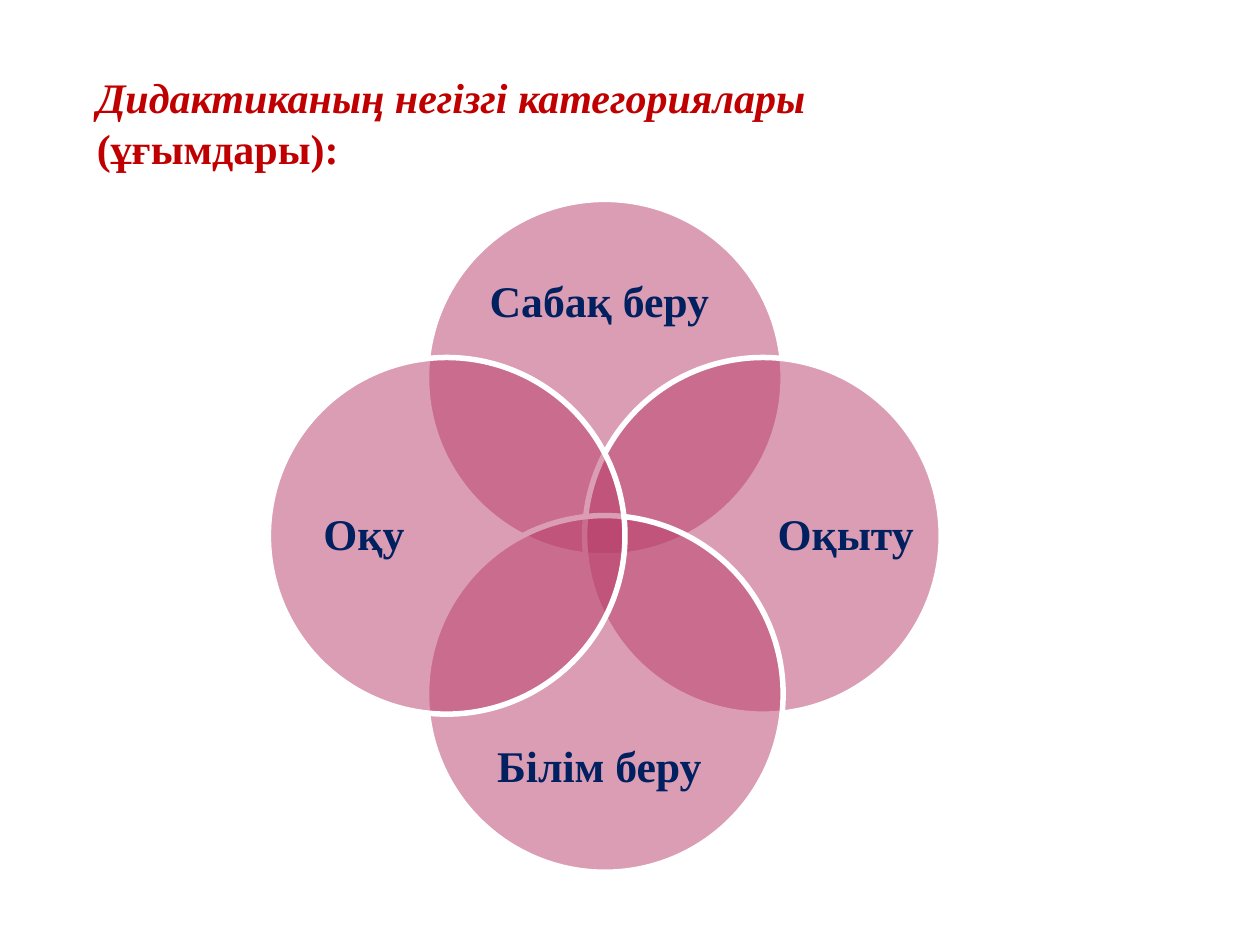
from dataclasses import dataclass

import lxml.etree
import pptx
import pptx.dml.color
import pptx.enum.shapes
import pptx.enum.text
import pptx.oxml.ns
import pptx.util


@dataclass(frozen=True)
class Theme:
    font: str = "Times New Roman"
    title_color: str = "C00000"
    label_color: str = "002060"
    circle_color: str = "B83D68"
    outline_color: str = "FFFFFF"
    circle_alpha: int = 50
    title_size: float = 24
    label_size: float = 25
    outline_width: float = 3.15


@dataclass(frozen=True)
class Box:
    left: float
    top: float
    width: float
    height: float

    def centered(self, x, y, width, height):
        """Inner box from its centre and size, all as shares of this box."""
        return Box(self.left + (x - width / 2) * self.width,
                   self.top + (y - height / 2) * self.height,
                   width * self.width, height * self.height)

    def emu(self):
        return [pptx.util.Inches(v)
                for v in (self.left, self.top, self.width, self.height)]


THEME = Theme()
SLIDE_W, SLIDE_H = 10, 7.5


def rgb(value):
    return pptx.dml.color.RGBColor.from_string(value)


def add_run(p, text, size, color, italic=False):
    r = p.add_run()
    r.text = text
    r.font.name = THEME.font
    r.font.size = pptx.util.Pt(size)
    r.font.color.rgb = rgb(color)
    r.font.bold = True
    r.font.italic = italic


def add_title(slide, box):
    tf = slide.shapes.add_textbox(*box.emu()).text_frame
    tf.word_wrap = True
    tf.auto_size = pptx.enum.text.MSO_AUTO_SIZE.SHAPE_TO_FIT_TEXT
    p = tf.paragraphs[0]
    for text, italic in (("Дидактиканың негізгі категориялары", True),
                         (" (ұғымдары):", False)):
        add_run(p, text, THEME.title_size, THEME.title_color, italic)


def add_circle(slide, box):
    sp = slide.shapes.add_shape(pptx.enum.shapes.MSO_SHAPE.OVAL, *box.emu())
    sp.shadow.inherit = False
    sp.fill.solid()
    sp.fill.fore_color.rgb = rgb(THEME.circle_color)
    sp.line.color.rgb = rgb(THEME.outline_color)
    sp.line.width = pptx.util.Pt(THEME.outline_width)
    # Transparency of the fill
    qn = pptx.oxml.ns.qn
    color = sp.element.spPr.find(qn("a:solidFill")).find(qn("a:srgbClr"))
    lxml.etree.SubElement(color, qn("a:alpha"),
                          val=str(THEME.circle_alpha * 1000))


def add_label(slide, box, text):
    tf = slide.shapes.add_textbox(*box.emu()).text_frame
    tf.word_wrap = True
    tf.vertical_anchor = pptx.enum.text.MSO_ANCHOR.MIDDLE
    tf.margin_left = tf.margin_right = tf.margin_top = tf.margin_bottom = 0
    p = tf.paragraphs[0]
    p.alignment = pptx.enum.text.PP_ALIGN.CENTER
    p.line_spacing = 0.9
    add_run(p, text, THEME.label_size, THEME.label_color)


def add_venn(slide, box):
    """Four overlapping circles around the centre of a square box."""
    diameter, circle_shift = 0.53, 0.235
    long_side = 0.41
    # Direction from the centre, in drawing order: top, right, bottom, left
    categories = (("Сабақ беру ", 0, -1), ("Оқыту", 1, 0),
                  ("Білім беру ", 0, 1), ("Оқу", -1, 0))
    for text, dx, dy in categories:
        add_circle(slide, box.centered(0.5 + dx * circle_shift,
                                       0.5 + dy * circle_shift,
                                       diameter, diameter))
        # Labels sit in the outer part of each circle
        width, height = (0.21, long_side) if dx else (long_side, 0.17)
        add_label(slide, box.centered(0.5 + dx * 0.358, 0.5 + dy * 0.345,
                                      width, height), text)


def main():
    prs = pptx.Presentation()
    prs.slide_width = pptx.util.Inches(SLIDE_W)
    prs.slide_height = pptx.util.Inches(SLIDE_H)
    slide = prs.slides.add_slide(prs.slide_layouts[6])
    page = Box(0, 0, SLIDE_W, SLIDE_H)
    add_title(slide, page.centered(0.39, 0.13, 0.646, 0.121))
    side = 5.34
    add_venn(slide, page.centered(0.48, 0.567, side / SLIDE_W, side / SLIDE_H))
    prs.save("out.pptx")


if __name__ == "__main__":
    main()
